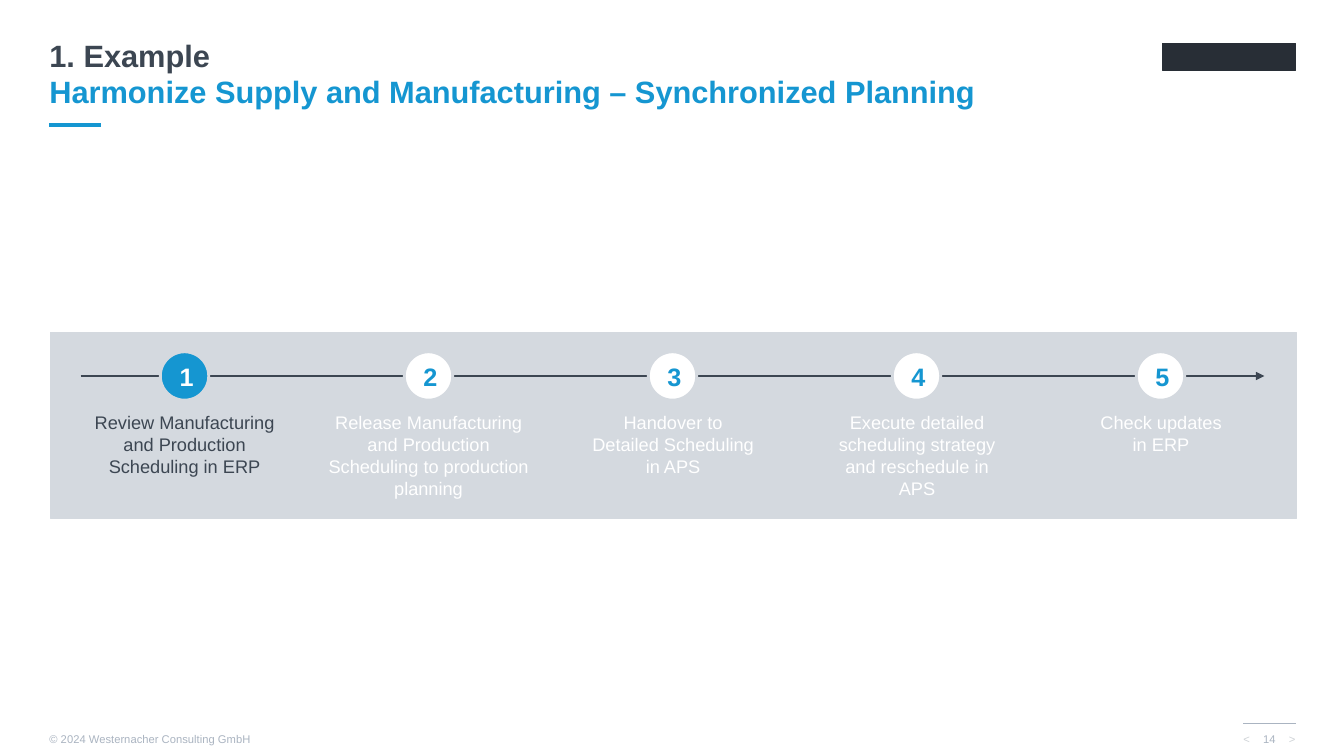
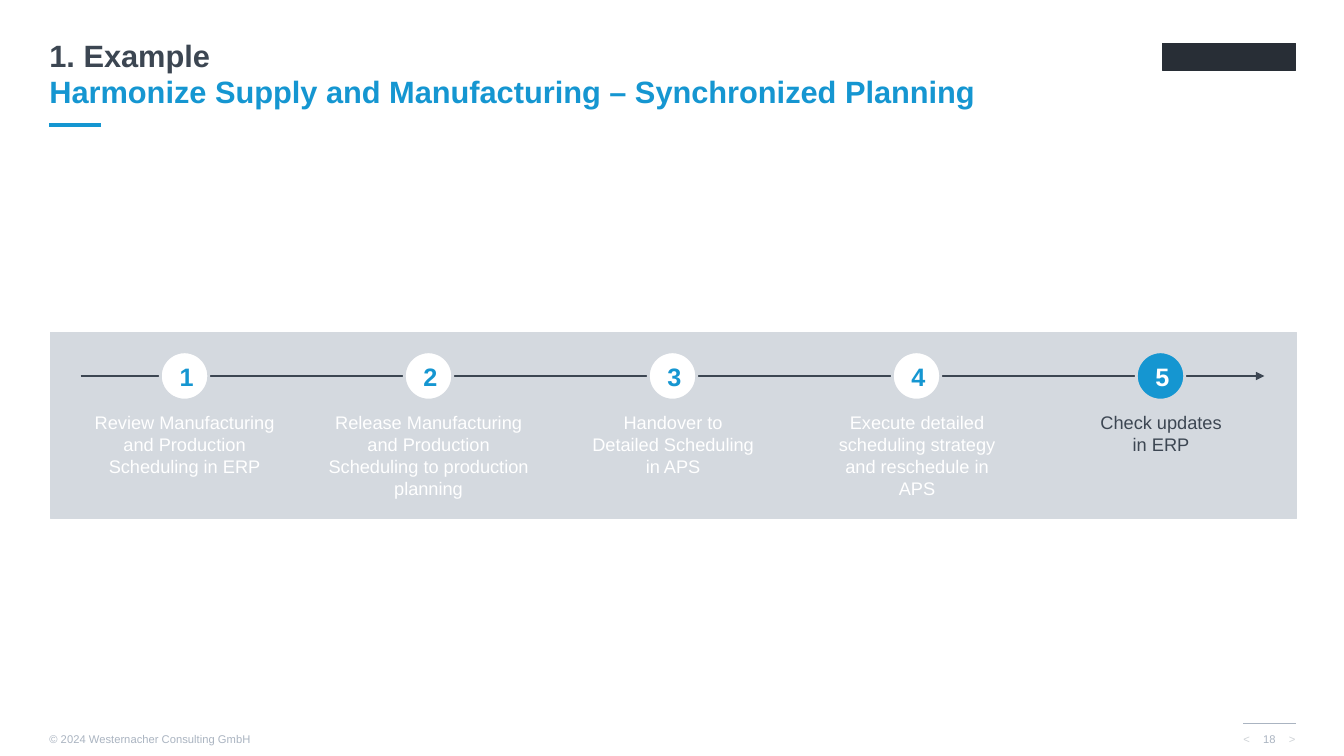
"""Build two process slides that highlight one step of a planning timeline."""
from dataclasses import dataclass

from lxml.etree import SubElement
from pptx import Presentation
from pptx.dml.color import RGBColor
from pptx.enum.shapes import MSO_CONNECTOR, MSO_SHAPE
from pptx.enum.text import MSO_ANCHOR as Anchor, PP_ALIGN as Align
from pptx.oxml.ns import qn
from pptx.shapes.autoshape import Shape
from pptx.shapes.connector import Connector
from pptx.slide import Slide
from pptx.text.text import TextFrame
from pptx.util import Emu, Pt

EMU_PER_PX = 9144
FONT = "Arial"
COLORS = {
    "blue": "1596D1",
    "dark": "3C4652",
    "logo": "282E36",
    "band": "D4D9DF",
    "footer": "AAB4C1",
    "pager": "CED2D6",
    "white": "FFFFFF",
}
MARGIN = 49
AXIS_Y = 373
FIRST_CENTER = 183
STEP_PITCH = 242
BADGE = 48
LABEL_TOP = 408


@dataclass(frozen=True)
class Box:
    left: int
    top: int
    width: int
    height: int


@dataclass(frozen=True)
class TextStyle:
    size: int
    color: str
    bold: bool = False
    align: Align = Align.LEFT
    anchor: Anchor = Anchor.TOP
    insets: tuple[int, int, int, int] = (0, 0, 0, 0)


@dataclass(frozen=True)
class Caption:
    text: str
    box: Box
    style: TextStyle


@dataclass(frozen=True)
class Step:
    text: str
    width: int
    height: int


@dataclass(frozen=True)
class StepLook:
    badge: str
    number: str
    label: str


@dataclass(frozen=True)
class Page:
    number: int
    active_step: int


STEPS = (
    Step("Review Manufacturing and Production Scheduling in ERP", 200, 66),
    Step("Release Manufacturing and Production Scheduling to production planning", 200, 88),
    Step("Handover to Detailed Scheduling in APS", 167, 66),
    Step("Execute detailed scheduling strategy and reschedule in APS", 167, 88),
    Step("Check updates in ERP", 123, 66),
)
ACTIVE = StepLook("blue", "white", "dark")
INACTIVE = StepLook("white", "blue", "white")
PAGES = (Page(14, 1), Page(18, 5))

PAGE_NUMBER_BOX = Box(1236, 717, 46, 32)
PAGE_NUMBER_STYLE = TextStyle(8, "footer", align=Align.CENTER, anchor=Anchor.MIDDLE)
CAPTIONS = (
    Caption("<", Box(1223, 723, 31, 37),
            TextStyle(8, "pager", align=Align.CENTER, insets=(8, 4, 12, 4))),
    Caption(">", Box(1266, 723, 31, 37),
            TextStyle(8, "pager", align=Align.CENTER, insets=(0, 4, 0, 4))),
    Caption("© 2024 Westernacher Consulting GmbH", Box(MARGIN, 717, 210, 33),
            TextStyle(8, "footer", anchor=Anchor.MIDDLE)),
    Caption("Harmonize Supply and Manufacturing – Synchronized Planning",
            Box(MARGIN, 72, 1130, 37),
            TextStyle(22, "blue", bold=True, anchor=Anchor.BOTTOM)),
    Caption("1. Example", Box(MARGIN, 36, 1130, 37), TextStyle(22, "dark", bold=True)),
)


def px(length: int) -> Emu:
    """Convert px to EMU."""
    return Emu(length * EMU_PER_PX)


def rgb(name: str) -> RGBColor:
    """Look up a named colour."""
    return RGBColor.from_string(COLORS[name])


def place(box: Box) -> tuple[Emu, Emu, Emu, Emu]:
    """Convert a box to shape coordinates."""
    return px(box.left), px(box.top), px(box.width), px(box.height)


def write(frame: TextFrame, text: str, style: TextStyle) -> None:
    """Fill a text frame with one styled paragraph."""
    frame.text = text
    frame.word_wrap = True
    frame.vertical_anchor = style.anchor
    (frame.margin_left, frame.margin_top,
     frame.margin_right, frame.margin_bottom) = map(px, style.insets)
    paragraph = frame.paragraphs[0]
    paragraph.alignment = style.align
    for run in paragraph.runs:
        run.font.name = FONT
        run.font.size = Pt(style.size)
        run.font.bold = style.bold
        run.font.color.rgb = rgb(style.color)


def add_text(slide: Slide, text: str, box: Box, style: TextStyle) -> None:
    """Add a styled text box."""
    write(slide.shapes.add_textbox(*place(box)).text_frame, text, style)


def add_figure(slide: Slide, preset: MSO_SHAPE, box: Box, fill: str,
               outline: str, weight: float) -> Shape:
    """Add a flat preset shape."""
    figure = slide.shapes.add_shape(preset, *place(box))
    figure.shadow.inherit = False
    figure.fill.solid()
    figure.fill.fore_color.rgb = rgb(fill)
    figure.line.color.rgb = rgb(outline)
    figure.line.width = Pt(weight)
    return figure


def add_rule(slide: Slide, left: int, right: int, y: int,
             color: str, weight: float) -> Connector:
    """Add a horizontal line without a shadow."""
    rule = slide.shapes.add_connector(
        MSO_CONNECTOR.STRAIGHT, px(left), px(y), px(right), px(y))
    rule.line.color.rgb = rgb(color)
    rule.line.width = Pt(weight)
    SubElement(rule._element.spPr, qn("a:effectLst"))
    return rule


def add_frame(slide: Slide, page_number: int) -> None:
    """Add the title, footer and logo area shared by all slides."""
    add_rule(slide, 1233, 1285, 718, "footer", 0.75)
    add_rule(slide, MARGIN, 100, 124, "blue", 3)
    for caption in CAPTIONS:
        add_text(slide, caption.text, caption.box, caption.style)
    add_text(slide, str(page_number), PAGE_NUMBER_BOX, PAGE_NUMBER_STYLE)
    add_figure(slide, MSO_SHAPE.RECTANGLE, Box(1153, 43, 132, 27), "logo", "logo", 0.25)


def add_step(slide: Slide, number: int, step: Step, look: StepLook) -> None:
    """Add one numbered badge and its label."""
    center = FIRST_CENTER + (number - 1) * STEP_PITCH
    badge_box = Box(center - BADGE // 2, AXIS_Y - BADGE // 2, BADGE, BADGE)
    badge = add_figure(slide, MSO_SHAPE.OVAL, badge_box, look.badge, "band", 2)
    write(badge.text_frame, str(number),
          TextStyle(18, look.number, bold=True, align=Align.CENTER,
                    anchor=Anchor.MIDDLE, insets=(12, 8, 12, 8)))
    label_box = Box(center - step.width // 2, LABEL_TOP, step.width, step.height)
    add_text(slide, step.text, label_box, TextStyle(13, look.label, align=Align.CENTER))


def add_timeline(slide: Slide, active_step: int) -> None:
    """Add the band, its arrow and all steps."""
    add_figure(slide, MSO_SHAPE.RECTANGLE, Box(50, 330, 1236, 184), "band", "band", 0.25)
    arrow = add_rule(slide, 80, 1254, AXIS_Y, "dark", 1.75)
    SubElement(arrow.line._get_or_add_ln(), qn("a:tailEnd"), type="triangle")
    for number, step in enumerate(STEPS, start=1):
        add_step(slide, number, step, ACTIVE if number == active_step else INACTIVE)


def main() -> None:
    """Build and save the presentation."""
    deck = Presentation()
    deck.slide_width, deck.slide_height = px(1333), px(750)
    blank = deck.slide_layouts[6]
    for page in PAGES:
        slide = deck.slides.add_slide(blank)
        add_frame(slide, page.number)
        add_timeline(slide, page.active_step)
    deck.save("out.pptx")


if __name__ == "__main__":
    main()
